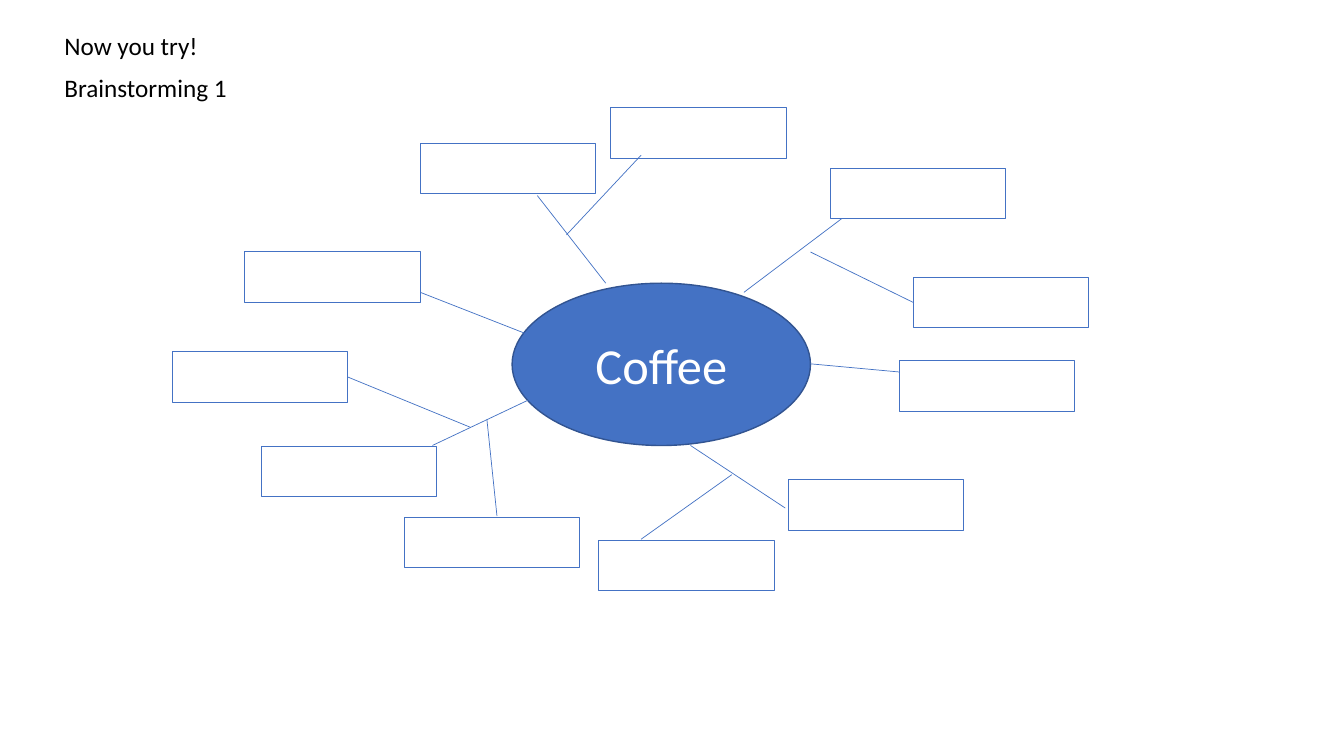
from dataclasses import dataclass
from typing import Optional

import pptx
import pptx.dml.color
import pptx.enum.shapes
import pptx.enum.text
import pptx.oxml.ns
import pptx.util
from lxml import etree

Pt = pptx.util.Pt
FONT = "Calibri"
BLUE, DARK_BLUE = "4472C4", "325491"
BOX_WIDTH, BOX_HEIGHT = 125.3, 36
LEFT_SIDE, RIGHT_SIDE = 1, 3


@dataclass
class IdeaBox:
    name: str
    left: float
    top: float


@dataclass
class Branch:
    x1: float
    y1: float
    x2: float
    y2: float
    end_box: Optional[str] = None
    end_side: int = 0


@dataclass
class Heading:
    text: str
    top: float
    width: float


IDEA_BOXES = [
    IdeaBox("upper right", 593.3, 120.2),
    IdeaBox("right", 652.3, 198),
    IdeaBox("lower right", 642.2, 257.8),
    IdeaBox("top right", 436.3, 77),
    IdeaBox("top left", 300.2, 102.2),
    IdeaBox("upper left", 175, 180),
    IdeaBox("left", 123.1, 251.3),
    IdeaBox("lower left", 186.5, 319),
    IdeaBox("bottom left", 288.7, 369.4),
    IdeaBox("bottom", 427.7, 385.9),
    IdeaBox("bottom right", 563, 342.7),
]

BRANCHES = [
    # From the topic outwards
    Branch(531.4, 208.8, 601.2, 156.2),
    Branch(432.7, 202.3, 383.8, 139.7),
    Branch(377.3, 285.8, 308.9, 318.2),
    Branch(493.2, 318.2, 560.9, 362.9),
    Branch(578.9, 259.9, 642.2, 265.7),
    Branch(377.3, 239, 300.2, 208.8),
    # Side branches
    Branch(578.9, 180, 652.3, 216, "right", LEFT_SIDE),
    Branch(522.7, 339.1, 457.9, 385.2),
    Branch(336.2, 305.3, 248.4, 269.3, "left", RIGHT_SIDE),
    Branch(355, 368.6, 347.8, 299.5),
    Branch(404.6, 167.8, 457.9, 110.9),
]

HEADINGS = [
    Heading("Now you try!", 18, 125.3),
    Heading("Brainstorming 1", 48.2, 136.1),
]


def color(value: str) -> pptx.dml.color.RGBColor:
    return pptx.dml.color.RGBColor.from_string(value)


def set_line(line, value: str, width: float) -> None:
    line.color.rgb = color(value)
    line.width = Pt(width)


def set_font(paragraph, size: float, value: str) -> None:
    paragraph.font.name = FONT
    paragraph.font.size = Pt(size)
    paragraph.font.color.rgb = color(value)


def draw_topic(slide, text: str):
    shape = slide.shapes.add_shape(
        pptx.enum.shapes.MSO_SHAPE.OVAL,
        Pt(365.8), Pt(202.3), Pt(213.1), Pt(115.9))
    shape.shadow.inherit = False
    shape.fill.solid()
    shape.fill.fore_color.rgb = color(BLUE)
    set_line(shape.line, DARK_BLUE, 1)
    shape.text_frame.vertical_anchor = pptx.enum.text.MSO_ANCHOR.MIDDLE
    paragraph = shape.text_frame.paragraphs[0]
    paragraph.text = text
    paragraph.alignment = pptx.enum.text.PP_ALIGN.CENTER
    set_font(paragraph, 36, "FFFFFF")


def draw_idea_box(slide, box: IdeaBox):
    shape = slide.shapes.add_shape(
        pptx.enum.shapes.MSO_SHAPE.RECTANGLE,
        Pt(box.left), Pt(box.top), Pt(BOX_WIDTH), Pt(BOX_HEIGHT))
    shape.shadow.inherit = False
    shape.fill.background()
    set_line(shape.line, BLUE, 0.75)
    return shape


def draw_branch(slide, branch: Branch, boxes: dict) -> None:
    connector = slide.shapes.add_connector(
        pptx.enum.shapes.MSO_CONNECTOR.STRAIGHT,
        Pt(branch.x1), Pt(branch.y1), Pt(branch.x2), Pt(branch.y2))
    if branch.end_box:
        connector.end_connect(boxes[branch.end_box], branch.end_side)
    set_line(connector.line, BLUE, 0.5)
    etree.SubElement(connector._element.spPr, pptx.oxml.ns.qn("a:effectLst"))


def draw_heading(slide, heading: Heading) -> None:
    shape = slide.shapes.add_textbox(
        Pt(38.9), Pt(heading.top), Pt(heading.width), Pt(29))
    shape.text_frame.word_wrap = True
    shape.text_frame.auto_size = pptx.enum.text.MSO_AUTO_SIZE.SHAPE_TO_FIT_TEXT
    paragraph = shape.text_frame.paragraphs[0]
    paragraph.text = heading.text
    set_font(paragraph, 18, "000000")


def main() -> None:
    presentation = pptx.Presentation()
    presentation.slide_width = Pt(960)
    presentation.slide_height = Pt(540)
    slide = presentation.slides.add_slide(presentation.slide_layouts[6])

    # Mind map
    draw_topic(slide, "Coffee")
    boxes = {box.name: draw_idea_box(slide, box) for box in IDEA_BOXES}
    for branch in BRANCHES:
        draw_branch(slide, branch, boxes)

    # Headings
    for heading in HEADINGS:
        draw_heading(slide, heading)

    presentation.save("out.pptx")


if __name__ == "__main__":
    main()
